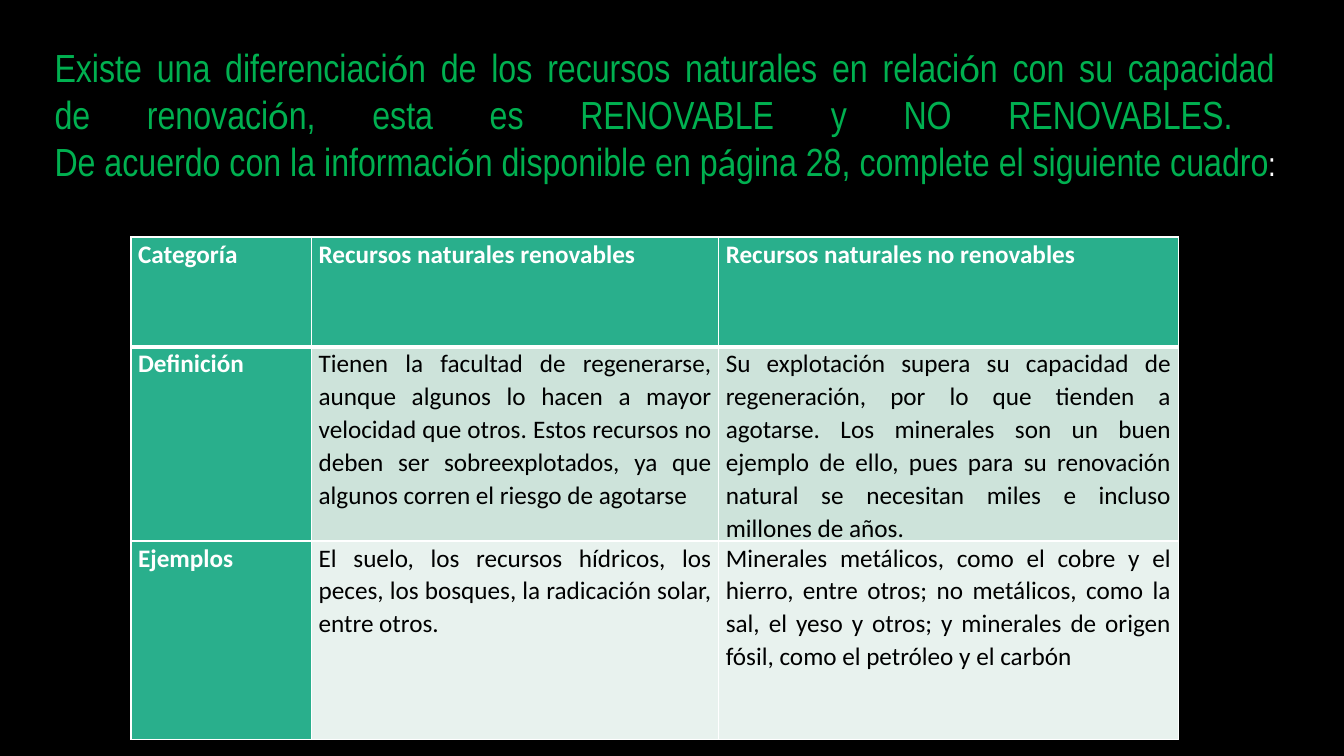
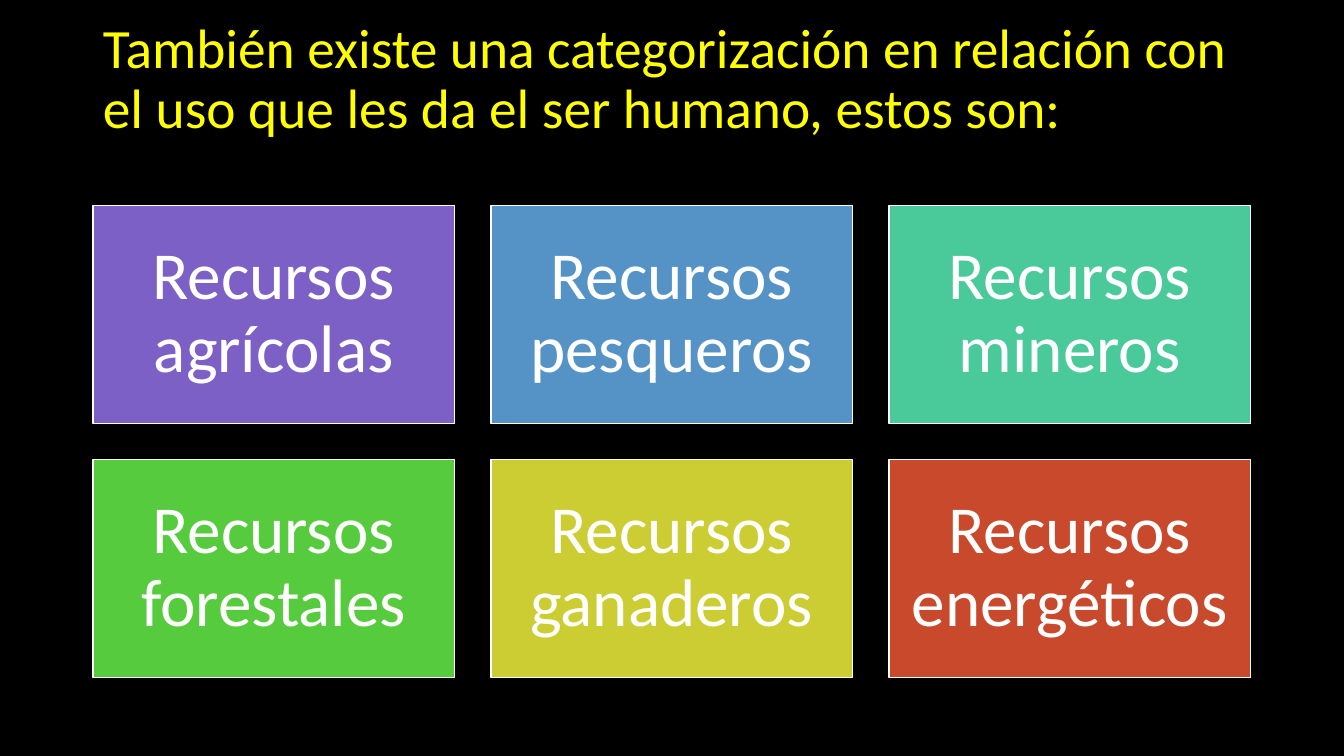
from copy import deepcopy
from itertools import groupby, product

from lxml.etree import SubElement
from pptx import Presentation
from pptx.dml.color import RGBColor
from pptx.enum.shapes import MSO_SHAPE as Shape
from pptx.enum.text import MSO_ANCHOR as Anchor, MSO_AUTO_SIZE as AutoSize, PP_ALIGN as Align
from pptx.oxml.ns import qn
from pptx.util import Cm, Pt

BLACK, WHITE, GREEN, YELLOW = "000000", "FFFFFF", "00B050", "FFFF00"
HEADER, LIGHT, PALE = "29AF8C", "CDE3DA", "E8F2EE"
BODY_FONT, NARROW_FONT = "Calibri", "Arial Narrow"

RENEWAL_LINES = [
    "Existe una diferenciación de los recursos naturales en relación con su capacidad ",
    "de renovación, esta es RENOVABLE y NO RENOVABLES. ",
    "De acuerdo con la información disponible en página 28, complete el siguiente cuadro",
]
TABLE_ROWS = [
    ("Categoría", "Recursos naturales renovables", "Recursos naturales no renovables"),
    (
        "Definición",
        "Tienen la facultad de regenerarse, aunque algunos lo hacen a mayor velocidad que otros. "
        "Estos recursos no deben ser sobreexplotados, ya que algunos corren el riesgo de agotarse",
        "Su explotación supera su capacidad de regeneración, por lo que tienden a agotarse. "
        "Los minerales son un buen ejemplo de ello, pues para su renovación natural se necesitan "
        "miles e incluso millones de años.",
    ),
    (
        "Ejemplos",
        "El suelo, los recursos hídricos, los peces, los bosques, la radicación solar, entre otros.",
        "Minerales metálicos, como el cobre y el hierro, entre otros; no metálicos, como la sal, "
        "el yeso y otros; y minerales de origen fósil, como el petróleo y el carbón",
    ),
]
COLUMN_WIDTHS = (4.55, 10.26, 11.58)
ROW_HEIGHTS = (2.77, 4.88, 5)
ROW_FILLS = (HEADER, LIGHT, PALE)

USE_TITLE = "También existe una categorización en relación con el uso que les da el ser humano, estos son:"
USES = [
    ("Recursos agrícolas", "7C60C6"),
    ("Recursos pesqueros", "5593C7"),
    ("Recursos mineros", "4AC99B"),
    ("Recursos forestales", "57CB3E"),
    ("Recursos ganaderos", "CCCD32"),
    ("Recursos energéticos", "C9492C"),
]
GRID_COLUMNS, GRID_LEFT, GRID_TOP = 3, 2.34, 5.18
BOX_WIDTH, BOX_HEIGHT, BOX_GAP = 9.12, 5.49, 0.91


def rgb(value):
    return RGBColor.from_string(value)


def paint(target, color):
    target.fill.solid()
    target.fill.fore_color.rgb = rgb(color)


def add_span(para, text, size, color, font=BODY_FONT, bold=False):
    span = para.add_run()
    span.text = text
    span.font.size = Pt(size)
    span.font.name = font
    span.font.bold = bold
    span.font.color.rgb = rgb(color)
    return span


def break_line(para, span):
    para.add_line_break()
    line_break = para._p.findall(qn("a:br"))[-1]
    line_break.append(deepcopy(span._r.rPr))


def add_slide(deck, left, top, width, height, align):
    page = deck.slides.add_slide(deck.slide_layouts[5])
    title = page.shapes.title
    title.left, title.top, title.width, title.height = map(Cm, (left, top, width, height))
    frame = title.text_frame
    frame.vertical_anchor = Anchor.MIDDLE
    frame.auto_size = AutoSize.NONE
    para = frame.paragraphs[0]
    para.alignment = align
    return page, frame, para


def add_border(cell, side, width):
    line = SubElement(cell._tc.get_or_add_tcPr(), qn(f"a:ln{side}"), w=str(Pt(width)))
    fill = SubElement(line, qn("a:solidFill"))
    SubElement(fill, qn("a:srgbClr"), val=WHITE)


def format_cell(cell, text, row, column):
    heading = row == 0 or column == 0
    for side in "LRTB":
        thick = (row, side) in ((0, "B"), (1, "T"))
        add_border(cell, side, 3 if thick else 1)
    paint(cell, HEADER if heading else ROW_FILLS[row])
    cell.margin_left = cell.margin_right = Cm(0.18)
    cell.margin_top = cell.margin_bottom = 0
    para = cell.text_frame.paragraphs[0]
    para.alignment = Align.JUSTIFY
    para.line_spacing = 1.07
    add_span(para, text, 18, WHITE if heading else BLACK, bold=heading)


def add_renewal_slide(deck):
    page, frame, para = add_slide(deck, 1.12, 0.94, 31.62, 3.84, Align.JUSTIFY)
    frame.word_wrap = False
    frame.auto_size = AutoSize.SHAPE_TO_FIT_TEXT
    for index, line in enumerate(RENEWAL_LINES):
        if index:
            break_line(para, span)
        for accented, letters in groupby(line, lambda letter: letter in "áó"):
            font = BODY_FONT if accented else NARROW_FONT
            span = add_span(para, "".join(letters), 28, GREEN, font)
    add_span(para, ":", 24, WHITE, NARROW_FONT)

    table = page.shapes.add_table(
        len(TABLE_ROWS), len(COLUMN_WIDTHS), Cm(3.3), Cm(5.97),
        Cm(sum(COLUMN_WIDTHS)), Cm(sum(ROW_HEIGHTS)),
    ).table
    table.first_row = table.horz_banding = False
    for column, width in zip(table.columns, COLUMN_WIDTHS):
        column.width = Cm(width)
    for row, height in zip(table.rows, ROW_HEIGHTS):
        row.height = Cm(height)
    for row, column in product(range(len(TABLE_ROWS)), range(len(COLUMN_WIDTHS))):
        format_cell(table.cell(row, column), TABLE_ROWS[row][column], row, column)


def add_use_slide(deck):
    page, frame, para = add_slide(deck, 2.34, 1.02, 29.21, 3.68, Align.LEFT)
    para.line_spacing = 0.9
    span = add_span(para, USE_TITLE, 39.6, YELLOW)
    break_line(para, span)
    SubElement(para._p, qn("a:endParaRPr"), sz="3960")

    for index, (label, color) in enumerate(USES):
        row, column = divmod(index, GRID_COLUMNS)
        box = page.shapes.add_shape(
            Shape.RECTANGLE,
            Cm(GRID_LEFT + column * (BOX_WIDTH + BOX_GAP)),
            Cm(GRID_TOP + row * (BOX_HEIGHT + BOX_GAP)),
            Cm(BOX_WIDTH), Cm(BOX_HEIGHT),
        )
        box.shadow.inherit = False
        paint(box, color)
        box.line.color.rgb = rgb(WHITE)
        box.line.width = Pt(1)
        frame = box.text_frame
        frame.word_wrap = True
        frame.vertical_anchor = Anchor.MIDDLE
        frame.margin_left = frame.margin_right = frame.margin_top = frame.margin_bottom = Cm(0.51)
        para = frame.paragraphs[0]
        para.alignment = Align.CENTER
        para.line_spacing = 0.9
        add_span(para, label, 48, WHITE)


def main():
    deck = Presentation()
    deck.slide_width, deck.slide_height = Cm(33.87), Cm(19.05)
    paint(deck.slide_master.background, BLACK)
    add_renewal_slide(deck)
    add_use_slide(deck)
    deck.save("out.pptx")


if __name__ == "__main__":
    main()
